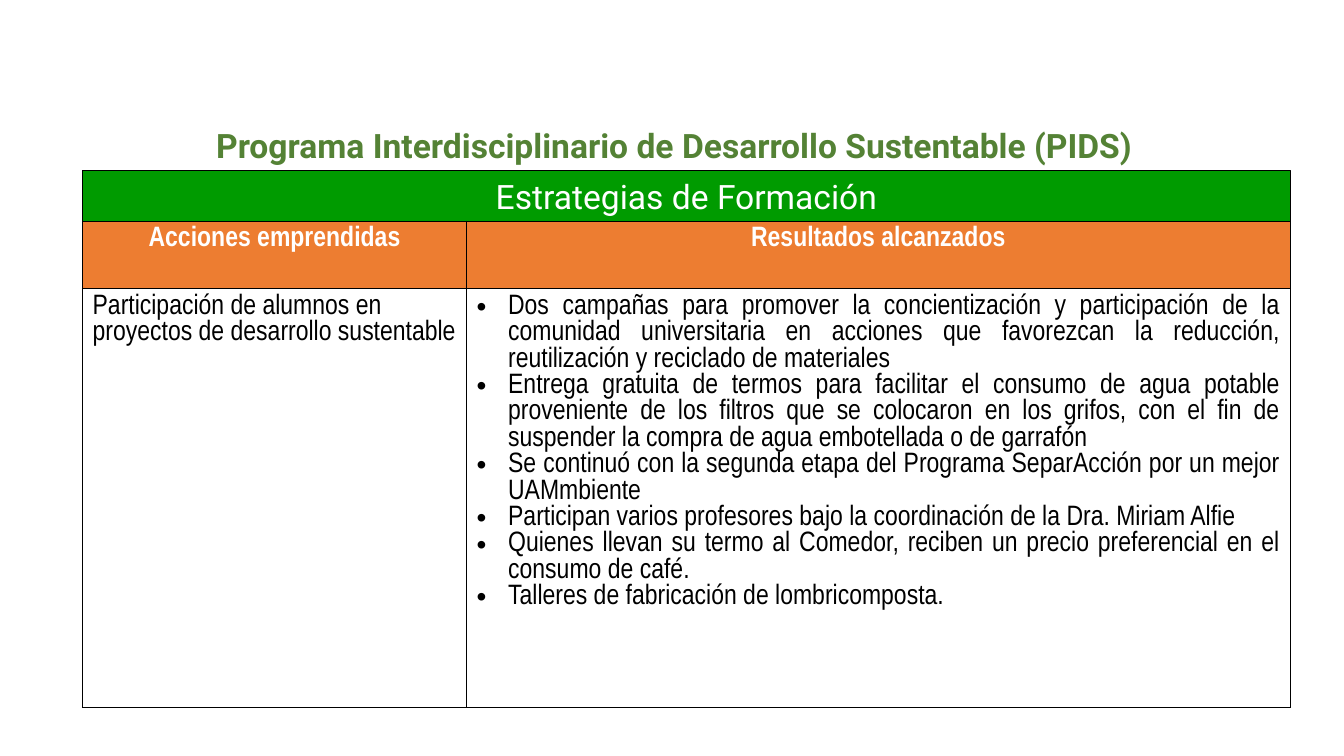
"""Build the slide on training strategies of the PIDS programme."""
from lxml import etree
from pptx import Presentation
from pptx.dml.color import RGBColor
from pptx.enum.shapes import MSO_SHAPE
from pptx.enum.text import MSO_ANCHOR, PP_ALIGN
from pptx.oxml.ns import qn
from pptx.util import Pt

TITLE = "Programa Interdisciplinario de Desarrollo Sustentable (PIDS)"
BANNER = "Estrategias de Formación"
HEADS = ["Acciones emprendidas", "Resultados alcanzados"]
ACTION = "Participación de alumnos en proyectos de desarrollo sustentable"
RESULTS = [
    "Dos campañas para promover la concientización y participación de la "
    "comunidad universitaria en acciones que favorezcan la reducción, "
    "reutilización y reciclado de materiales",
    "Entrega gratuita de termos para facilitar el consumo de agua potable "
    "proveniente de los filtros que se colocaron en los grifos, con el fin "
    "de suspender la compra de agua embotellada o de garrafón",
    "Se continuó con la segunda etapa del Programa SeparAcción por un mejor UAMmbiente",
    "Participan varios profesores bajo la coordinación de la Dra. Miriam Alfie",
    "Quienes llevan su termo al Comedor, reciben un precio preferencial en el "
    "consumo de café.",
    "Talleres de fabricación de lombricomposta.",
]

GREEN = RGBColor(0x00, 0x9B, 0x00)
OLIVE = RGBColor(0x54, 0x82, 0x35)
ORANGE = RGBColor(0xED, 0x7D, 0x31)
WHITE = RGBColor(0xFF, 0xFF, 0xFF)
BLACK = RGBColor(0x00, 0x00, 0x00)
CENTER, LEFT, JUSTIFY = PP_ALIGN.CENTER, PP_ALIGN.LEFT, PP_ALIGN.JUSTIFY
RECT = MSO_SHAPE.RECTANGLE
MIDDLE = MSO_ANCHOR.MIDDLE

SIDE, TOP, BAND = 59, 121.7, 36.3
COLS = [274.3, 588.3]
ROWS = [48.3, 298.8]
WIDTH = sum(COLS)
INDENT = Pt(22.5)


def style(para, face, size, color, bold, align):
    para.alignment = align
    font = para.font
    font.name, font.size, font.bold = face, Pt(size), bold
    font.color.rgb = color


def bullet(para):
    props = para._p.get_or_add_pPr()
    props.set("marL", str(INDENT))
    props.set("indent", str(-INDENT))
    etree.SubElement(props, qn("a:buFont"), typeface="Arial")
    etree.SubElement(props, qn("a:buChar"), char="•")


def border(cell):
    props = cell._tc.get_or_add_tcPr()
    for spot, side in enumerate(("lnL", "lnR", "lnT", "lnB")):
        line = etree.Element(qn("a:" + side), w=str(Pt(1)))
        fill = etree.SubElement(line, qn("a:solidFill"))
        etree.SubElement(fill, qn("a:srgbClr"), val=str(BLACK))
        props.insert(spot, line)


def fill_cell(cell, lines, color, bold, align, back=None, dots=False):
    frame = cell.text_frame
    frame.text = "\n".join(lines)
    for para in frame.paragraphs:
        if dots:
            bullet(para)
        style(para, "Arial Narrow", 20, color, bold, align)
    if back is None:
        cell.fill.background()
    else:
        cell.fill.solid()
        cell.fill.fore_color.rgb = back
    border(cell)


def add_title(slide):
    box = slide.shapes.add_textbox(Pt(82), Pt(85.7), Pt(799), Pt(BAND))
    frame = box.text_frame
    frame.word_wrap = True
    frame.text = TITLE
    style(frame.paragraphs[0], "Roboto", 24, OLIVE, True, CENTER)


def add_banner(slide):
    bar = slide.shapes.add_shape(RECT, Pt(SIDE), Pt(TOP), Pt(WIDTH), Pt(BAND))
    bar.shadow.inherit = False
    bar.fill.solid()
    bar.fill.fore_color.rgb = GREEN
    bar.line.color.rgb = BLACK
    bar.line.width = Pt(0.75)
    frame = bar.text_frame
    frame.vertical_anchor = MIDDLE
    frame.text = BANNER
    style(frame.paragraphs[0], "Roboto", 24, WHITE, False, CENTER)


def add_grid(slide):
    grid = slide.shapes.add_table(
        len(ROWS), len(COLS), Pt(SIDE), Pt(TOP + BAND), Pt(WIDTH), Pt(sum(ROWS))
    ).table
    for col, width in zip(grid.columns, COLS):
        col.width = Pt(width)
    for row, height in zip(grid.rows, ROWS):
        row.height = Pt(height)
    for spot, head in enumerate(HEADS):
        fill_cell(grid.cell(0, spot), [head], WHITE, True, CENTER, ORANGE)
    fill_cell(grid.cell(1, 0), [ACTION], BLACK, False, LEFT)
    fill_cell(grid.cell(1, 1), RESULTS, BLACK, False, JUSTIFY, dots=True)


def main():
    deck = Presentation()
    deck.slide_width, deck.slide_height = Pt(960), Pt(540)
    slide = deck.slides.add_slide(deck.slide_layouts[6])
    add_banner(slide)
    add_title(slide)
    add_grid(slide)
    deck.save("out.pptx")


if __name__ == "__main__":
    main()
